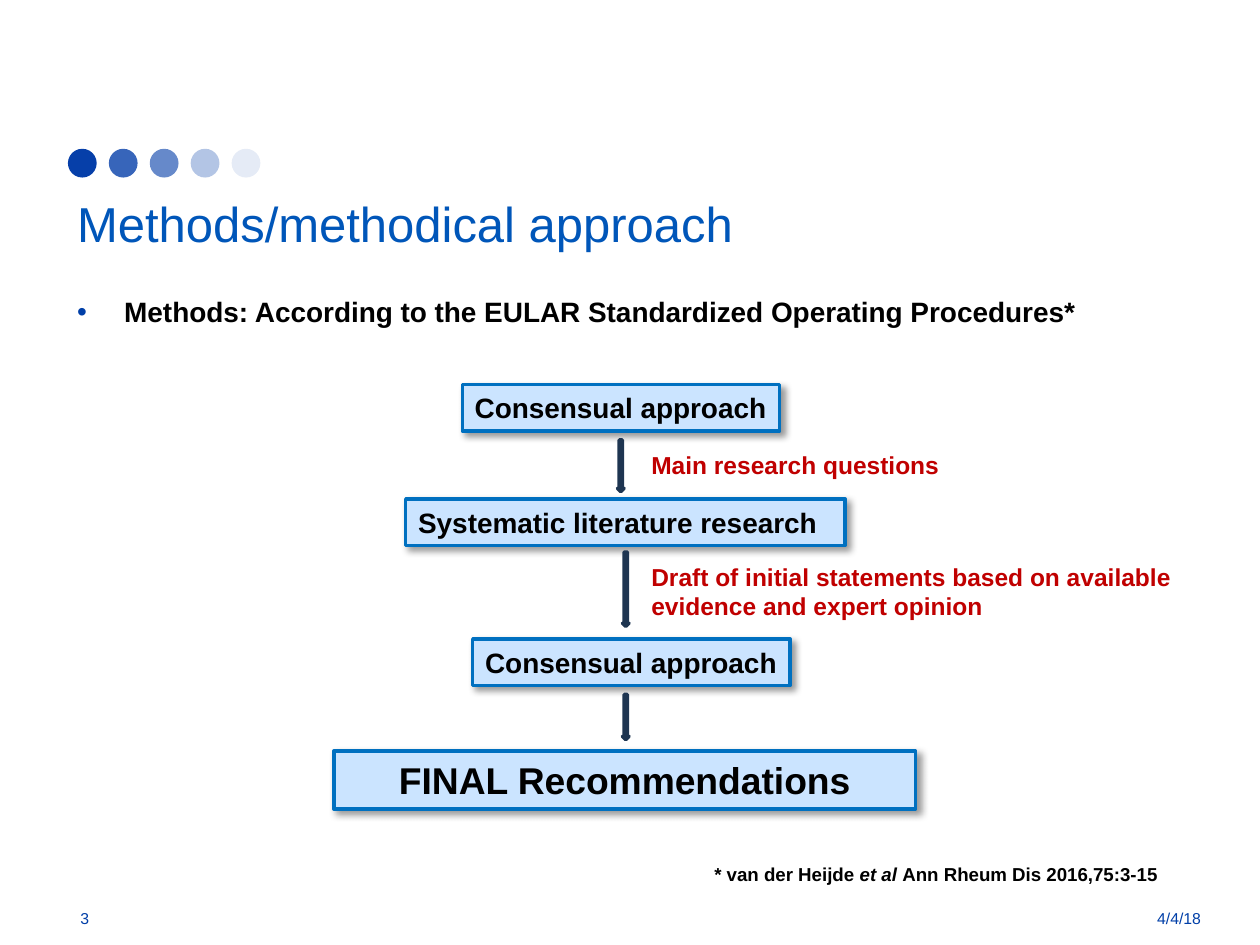
import pptx
import pptx.util
import pptx.dml.color
import pptx.enum.shapes
import pptx.enum.text
import pptx.oxml
import pptx.oxml.ns
from dataclasses import dataclass

Cm = pptx.util.Cm
Shape = pptx.enum.shapes.MSO_SHAPE
Align = pptx.enum.text.PP_ALIGN
Anchor = pptx.enum.text.MSO_ANCHOR
Fit = pptx.enum.text.MSO_AUTO_SIZE


@dataclass(frozen=True)
class Theme:
    font: str = "Arial"
    dot: str = "063FA9"
    title: str = "0056B9"
    small: str = "003FA8"
    ink: str = "000000"
    note: str = "C00000"
    fill: str = "CBE4FF"
    edge: str = "0070C0"
    arrow: str = "28476D"
    rim: str = "1E3551"
    head: float = 28
    final: float = 21.3
    text: float = 16
    label: float = 14
    cite: float = 10.7
    foot: float = 9


theme = Theme()


def color(code):
    return pptx.dml.color.RGBColor.from_string(code)


def xml(tag, attrs="", inner=""):
    space = pptx.oxml.ns.nsdecls("a")
    return pptx.oxml.parse_xml(f"<a:{tag} {space} {attrs}>{inner}</a:{tag}>")


def place(shape, box):
    shape.left, shape.top, shape.width, shape.height = map(Cm, box)


def style(para, size, code, bold=False, align=Align.LEFT):
    para.alignment = align
    font = para.font
    font.name, font.size, font.bold = theme.font, pptx.util.Pt(size), bold
    font.color.rgb = color(code)


def label(slide, box, text, size, code, bold=False, align=Align.LEFT,
          anchor=Anchor.TOP, wrap=True):
    frame = slide.shapes.add_textbox(*map(Cm, box)).text_frame
    frame.word_wrap = wrap
    frame.vertical_anchor = anchor
    para = frame.paragraphs[0]
    para.text = text
    style(para, size, code, bold, align)
    return para


def block(slide, kind, box, fill, line=None):
    shape = slide.shapes.add_shape(kind, *map(Cm, box))
    shape.shadow.inherit = False
    shape.fill.solid()
    shape.fill.fore_color.rgb = color(fill)
    if line:
        shape.line.color.rgb = color(line)
        shape.line.width = pptx.util.Pt(2)
    else:
        shape.line.fill.background()
    return shape


def add_dots(slide, box):
    left, top, width, size = box
    alphas = (100, 80, 61, 30, 10)
    step = (width - size) / (len(alphas) - 1)
    for i, alpha in enumerate(alphas):
        dot = block(slide, Shape.OVAL, (left + i * step, top, size, size), theme.dot)
        tint = dot.fill._xPr.find(".//" + pptx.oxml.ns.qn("a:srgbClr"))
        tint.append(xml("alpha", f'val="{alpha * 1000}"'))


def add_title(slide, box):
    title = slide.shapes.title
    place(title, box)
    frame = title.text_frame
    frame.text = "Methods/methodical approach"
    frame.auto_size = Fit.NONE
    frame.vertical_anchor = Anchor.MIDDLE
    style(frame.paragraphs[0], theme.head, theme.title)


def add_body(slide, box):
    body = slide.placeholders[1]
    place(body, box)
    frame = body.text_frame
    frame.text = "Methods: According to the EULAR Standardized Operating Procedures*"
    frame.auto_size = Fit.NONE
    para = frame.paragraphs[0]
    props = para._p.get_or_add_pPr()
    indent = Cm(0.95)
    props.set("marL", str(indent))
    props.set("indent", str(-indent))
    props.append(xml("buClr", inner=f'<a:srgbClr val="{theme.small}"/>'))
    props.append(xml("buFont", f'typeface="{theme.font}"'))
    props.append(xml("buChar", 'char="•"'))
    para.space_before = pptx.util.Pt(0)
    style(para, theme.text, theme.ink, True)


def add_step(slide, box, text, size, align):
    step = block(slide, Shape.RECTANGLE, box, theme.fill, theme.edge)
    shade = f'<a:srgbClr val="{theme.ink}"><a:alpha val="40000"/></a:srgbClr>'
    effects = step._element.spPr.find(pptx.oxml.ns.qn("a:effectLst"))
    effects.append(xml("outerShdw", 'blurRad="50800" dist="38100" dir="2700000"', shade))
    frame = step.text_frame
    frame.word_wrap = True
    frame.vertical_anchor = Anchor.TOP
    para = frame.paragraphs[0]
    para.text = text
    style(para, size, theme.ink, True, align)


def add_flow(slide, box):
    left, top, width, height = box
    final = 1.17
    steps = (
        (2.59, 0, 6.4, "Consensual approach"),
        (1.45, 2.31, 8.86, "Systematic literature research"),
        (2.8, 5.13, 6.4, "Consensual approach"),
    )
    for x, y, wide, text in steps:
        add_step(slide, (left + x, top + y, wide, 0.94), text, theme.text, Align.LEFT)
    add_step(slide, (left, top + height - final, width, final),
             "FINAL Recommendations", theme.final, Align.CENTER)
    for x, y, tall in ((5.72, 1.12, 1.04), (5.82, 3.38, 1.5), (5.82, 6.25, 0.91)):
        block(slide, Shape.DOWN_ARROW, (left + x, top + y, 0.13, tall),
              theme.arrow, theme.rim)
    notes = (
        (1.19, 9.2, 0.86, "Main research questions"),
        (3.45, 12.09, 1.45,
         "Draft of initial statements based on available evidence and expert opinion"),
    )
    for y, wide, tall, text in notes:
        label(slide, (left + 6.15, top + y, wide, tall), text,
              theme.label, theme.note, True)


def add_cite(slide, box):
    para = label(slide, box, "", theme.cite, theme.ink, True, wrap=False)
    for text, slant in (("* van der Heijde ", False), ("et al ", True),
                        ("Ann Rheum Dis 2016,75:3-15", False)):
        run = para.add_run()
        run.text = text
        run.font.italic = slant


def add_foot(slide, box):
    left, top, width, height = box
    date = 3.4
    label(slide, (left, top, 2.44, height), "3", theme.foot, theme.small,
          anchor=Anchor.MIDDLE)
    label(slide, (left + width - date, top, date, height), "4/4/18", theme.foot,
          theme.small, align=Align.RIGHT, anchor=Anchor.MIDDLE)


def main():
    deck = pptx.Presentation()
    deck.slide_width, deck.slide_height = Cm(25.4), Cm(19.05)
    slide = deck.slides.add_slide(deck.slide_layouts[1])
    add_dots(slide, (1.37, 3, 3.88, 0.58))
    add_title(slide, (1.3, 3.61, 23.14, 1.75))
    add_body(slide, (1.3, 5.82, 23.14, 11.46))
    add_flow(slide, (6.73, 7.75, 11.73, 8.56))
    add_cite(slide, (14.15, 17.27, 9.55, 0.71))
    add_foot(slide, (1.37, 18.01, 23.09, 1.02))
    deck.save("out.pptx")


if __name__ == "__main__":
    main()
